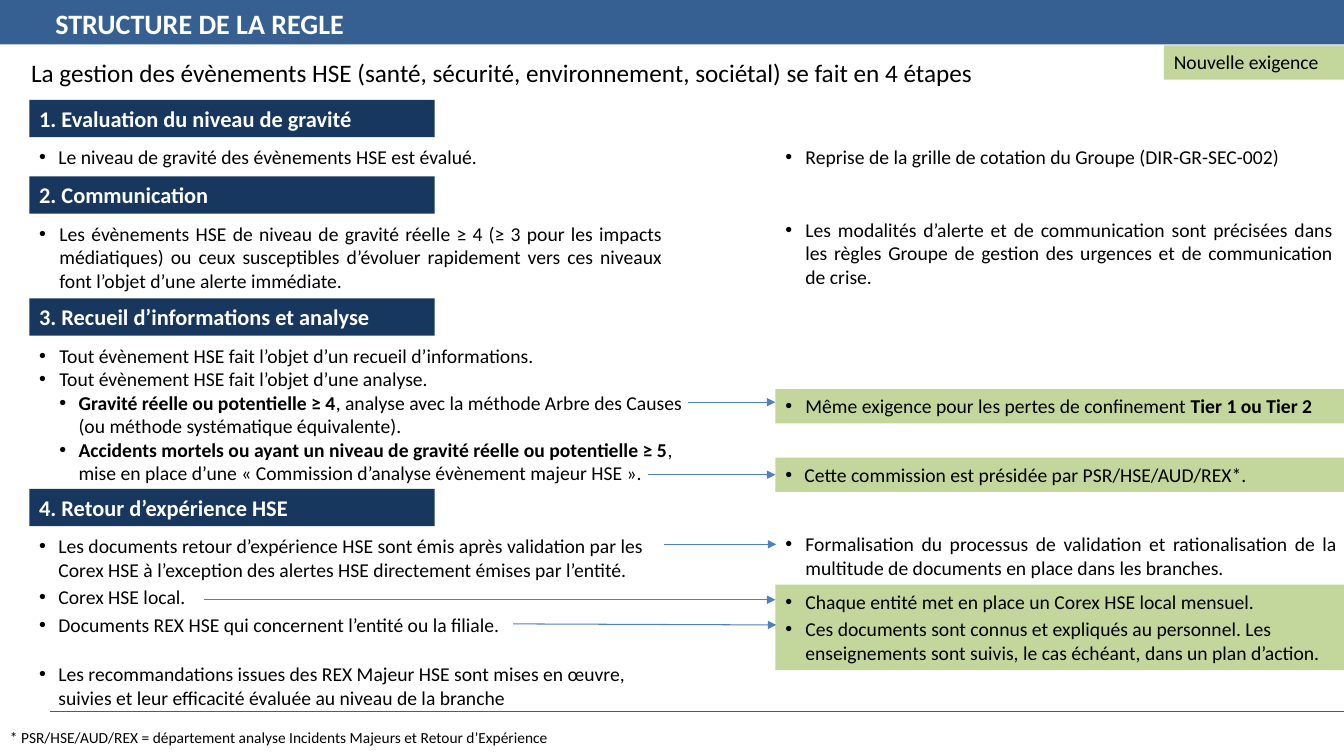
from lxml import etree
from pptx import Presentation
from pptx.dml.color import RGBColor
from pptx.enum.shapes import MSO_CONNECTOR, MSO_SHAPE
from pptx.enum.text import MSO_ANCHOR, PP_ALIGN
from pptx.oxml.ns import qn
from pptx.util import Inches, Pt

WIDTH, HEIGHT = Inches(13.33), Inches(7.5)
BLACK = RGBColor(0x00, 0x00, 0x00)
WHITE = RGBColor(0xFF, 0xFF, 0xFF)
BLUE = RGBColor(0x37, 0x60, 0x92)
NAVY = RGBColor(0x17, 0x37, 0x5E)
GREEN = RGBColor(0xC3, 0xD6, 0x9B)
ARROW_BLUE = RGBColor(0x4F, 0x81, 0xBD)

# Grid: the slide is cut into 100 columns and 100 rows
LEFT, RIGHT = 2.18, 57.69
BANNER_WIDTH, BANNER_HEIGHT, BODY_OFFSET = 30.16, 4.93, 5.33
ONE_LINE = 4.53
RIGHT_WIDTH = 42.31

SECTIONS = [
    # banner row, heading, body width, body height, body items
    (13.2, "1. Evaluation du niveau de gravité", 41.34, ONE_LINE,
     [{"spans": ["Le niveau de gravité des évènements HSE est évalué."], "indent": 0.19}]),
    (23.33, "2. Communication", 47.86, 10.8,
     [{"spans": ["Les évènements HSE de niveau de gravité réelle ≥ 4 (≥ 3 pour les impacts "
                 "médiatiques) ou ceux susceptibles d’évoluer rapidement vers ces niveaux "
                 "font l’objet d’une alerte immédiate."], "align": PP_ALIGN.JUSTIFY}]),
    (39.47, "3. Recueil d’informations et analyse", 49.59, 20.13,
     [{"spans": ["Tout évènement HSE fait l’objet d’un recueil d’informations."]},
      {"spans": ["Tout évènement HSE fait l’objet d’une analyse."]},
      {"spans": [("Gravité réelle ou potentielle ≥ 4",),
                 ", analyse avec la méthode Arbre des Causes (ou méthode systématique "
                 "équivalente)."], "margin": 0.39, "indent": 0.19},
      {"spans": [("Accidents mortels ou ayant un niveau de gravité réelle ou potentielle ≥ 5",),
                 ", mise en place d’une « Commission d’analyse évènement majeur HSE »."],
       "margin": 0.39, "indent": 0.19, "after": 3}]),
    (64.67, "4. Retour d’expérience HSE", 47.86, 24.67,
     [{"spans": [text], "indent": 0.19, "after": after} for text, after in [
         ("Les documents retour d’expérience HSE sont émis après validation par les Corex HSE "
          "à l’exception des alertes HSE directement émises par l’entité.", 3),
         ("Corex HSE local.", 3),
         ("Documents REX HSE qui concernent l’entité ou la filiale.", 18),
         ("Les recommandations issues des REX Majeur HSE sont mises en œuvre, suivies et leur "
          "efficacité évaluée au niveau de la branche", 3)]]),
]

REMARKS = [
    # row, width, height, fill, items
    (18.53, 42.54, ONE_LINE, None,
     [{"spans": ["Reprise de la grille de cotation du Groupe (DIR-GR-SEC-002)"]}]),
    (28.13, 42.24, 10.8, None,
     [{"spans": ["Les modalités d’alerte et de communication sont précisées dans les règles "
                 "Groupe de gestion des urgences et de communication de crise."],
       "align": PP_ALIGN.JUSTIFY}]),
    (51.47, RIGHT_WIDTH, ONE_LINE, GREEN,
     [{"spans": ["Même exigence pour les pertes de confinement ", ("Tier 1 ou Tier 2",)]}]),
    (60.53, RIGHT_WIDTH, ONE_LINE, GREEN,
     [{"spans": ["Cette commission est présidée par PSR/HSE/AUD/REX*."], "indent": 0.19}]),
    (69.73, 42.54, 7.6, None,
     [{"spans": ["Formalisation du processus de validation et rationalisation de la multitude "
                 "de documents en place dans les branches."], "align": PP_ALIGN.JUSTIFY}]),
    (77.33, RIGHT_WIDTH, 11.33, GREEN,
     [{"spans": ["Chaque entité met en place un Corex HSE local mensuel."], "after": 3},
      {"spans": ["Ces documents sont connus et expliqués au personnel. Les enseignements sont "
                 "suivis, le cas échéant, dans un plan d’action."]}]),
]

ARROWS = [
    # start column, start row, end column, end row
    (51.16, 53.2, RIGHT, 53.2),
    (49.44, 72, 57.76, 72),
    (15.15, 79.33, RIGHT, 79.33),
    (38.18, 82.53, 57.76, 82.67),
]


def across(columns):
    return int(WIDTH * columns / 100)


def down(rows):
    return int(HEIGHT * rows / 100)


def add_box(page, left, top, width, height, fill=None):
    """Text box, or a filled rectangle when a fill is given."""
    place = across(left), down(top), across(width), down(height)
    if fill is None:
        box = page.shapes.add_textbox(*place)
    else:
        box = page.shapes.add_shape(MSO_SHAPE.RECTANGLE, *place)
        box.shadow.inherit = False
        box.fill.solid()
        box.fill.fore_color.rgb = fill
        box.line.fill.background()
    frame = box.text_frame
    frame.word_wrap = True
    frame.vertical_anchor = MSO_ANCHOR.TOP
    return box


def write_span(para, text, size, color, bold):
    span = para.add_run()
    span.text = text
    span.font.color.rgb = color
    formats = {"name": "Calibri", "size": Pt(size), "bold": bold}
    for name, value in formats.items():
        setattr(span.font, name, value)


def write_line(box, text, size, color=BLACK, bold=False, spacing=1.0):
    para = box.text_frame.paragraphs[0]
    para.alignment = PP_ALIGN.LEFT
    para.line_spacing = spacing
    write_span(para, text, size, color, bold)


def write_bullets(box, items):
    """One bulleted paragraph per item; a span in a tuple is bold."""
    frame = box.text_frame
    for number, item in enumerate(items):
        para = frame.add_paragraph() if number else frame.paragraphs[0]
        indent = item.get("indent", 0.2)
        properties = para._p.get_or_add_pPr()
        properties.set("marL", str(Inches(item.get("margin", indent))))
        properties.set("indent", str(-Inches(indent)))
        etree.SubElement(properties, qn("a:buFont"), typeface="Arial")
        etree.SubElement(properties, qn("a:buChar"), char="•")
        para.alignment = item.get("align", PP_ALIGN.LEFT)
        para.space_after = Pt(item.get("after", 0))
        for span in item["spans"]:
            bold = isinstance(span, tuple)
            write_span(para, span[0] if bold else span, 14, BLACK, bold)


def add_line(page, left, top, right, bottom, color, arrow=False):
    line = page.shapes.add_connector(
        MSO_CONNECTOR.STRAIGHT, across(left), down(top), across(right), down(bottom))
    line.line.color.rgb = color
    line.line.width = Pt(0.75)
    if arrow:
        etree.SubElement(line.line._get_or_add_ln(), qn("a:tailEnd"), type="triangle")
    etree.SubElement(line._element.spPr, qn("a:effectLst"))
    return line


def main():
    deck = Presentation()
    deck.slide_width, deck.slide_height = WIDTH, HEIGHT
    page = deck.slides.add_slide(deck.slide_layouts[6])

    # Title bar, rule above the footnote, introduction
    add_line(page, 3.75, 94.13, 100, 94.13, BLUE)
    add_box(page, 0, 0, 100, 5.87, BLUE)
    write_line(add_box(page, 3.38, 0.67, 40.74, 5.87),
               "STRUCTURE DE LA REGLE", 20, WHITE, True, 0.9)
    write_line(add_box(page, 1.58, 6.93, 92.12, 5.33),
               "La gestion des évènements HSE (santé, sécurité, environnement, sociétal) "
               "se fait en 4 étapes", 18)

    # Four steps on the left
    for row, heading, width, height, items in SECTIONS:
        banner = add_box(page, LEFT, row, BANNER_WIDTH, BANNER_HEIGHT, NAVY)
        write_line(banner, heading, 16, WHITE, True)
        write_bullets(add_box(page, LEFT, row + BODY_OFFSET, width, height), items)

    # Remarks on the right, green for new requirements
    remarks = []
    for row, width, height, fill, items in REMARKS:
        remarks.append(add_box(page, RIGHT, row, width, height, fill))
        write_bullets(remarks[-1], items)
    write_line(add_box(page, 86.6, 6, 13.4, ONE_LINE, GREEN), "Nouvelle exigence", 14)

    # Arrows from steps to remarks
    for ends in ARROWS:
        add_line(page, *ends, ARROW_BLUE, arrow=True)
    commission_row = REMARKS[3][0] + ONE_LINE / 2
    commission_arrow = add_line(page, 48.24, commission_row, RIGHT, commission_row,
                                ARROW_BLUE, arrow=True)
    commission_arrow.end_connect(remarks[3], 1)

    # Footnote
    write_line(add_box(page, 0, 95.6, 44.11, 4.13, WHITE),
               "* PSR/HSE/AUD/REX = département analyse Incidents Majeurs et Retour "
               "d’Expérience", 11)

    deck.save("out.pptx")


if __name__ == "__main__":
    main()
